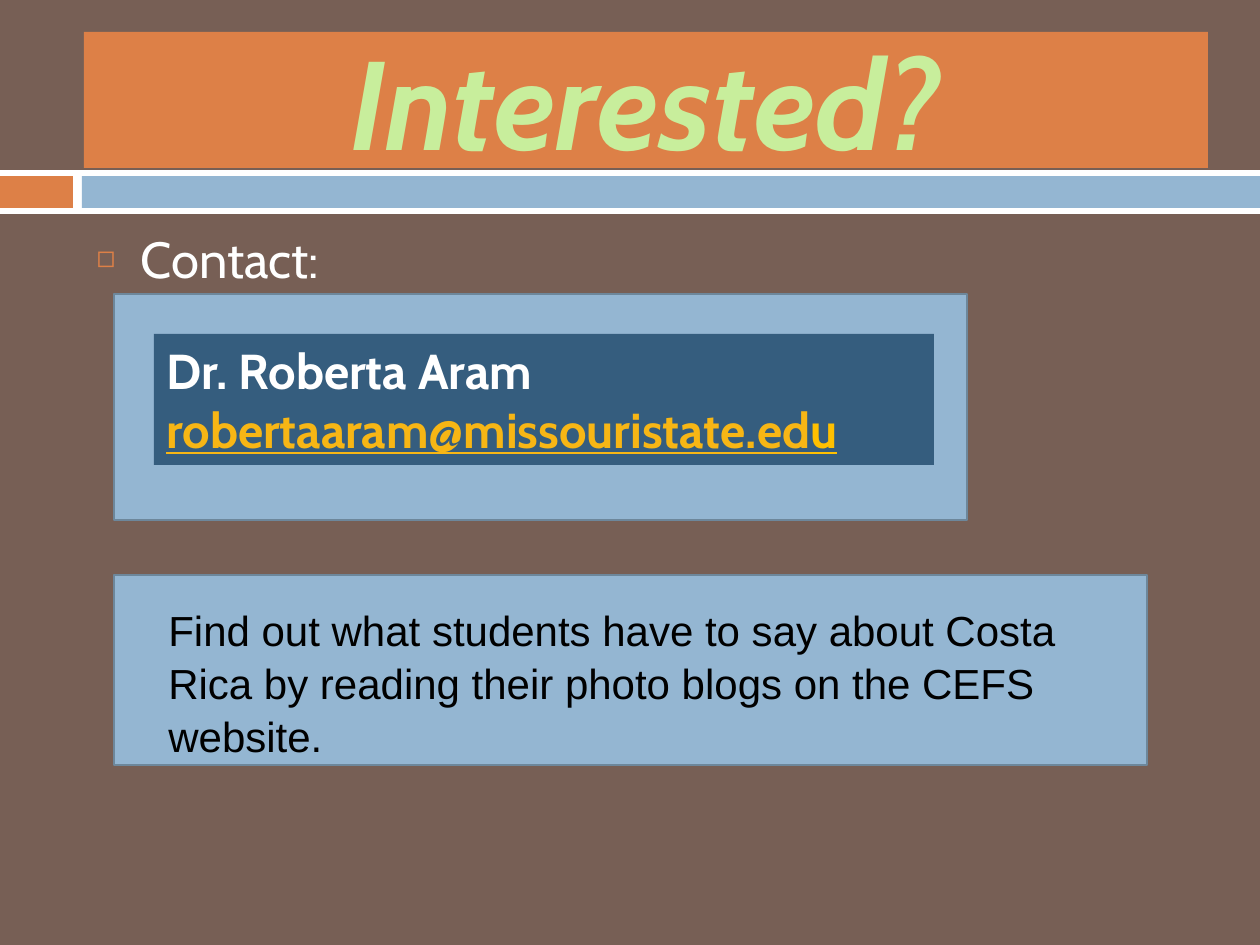
from dataclasses import dataclass
from typing import Optional

from lxml.etree import SubElement
from pptx import Presentation
from pptx.dml.color import RGBColor
from pptx.enum.shapes import MSO_SHAPE as Preset
from pptx.enum.text import MSO_ANCHOR as Anchor, MSO_AUTO_SIZE as AutoSize, PP_ALIGN as Align
from pptx.oxml.ns import qn
from pptx.util import Emu, Pt

PX = 914400 // 126  # EMU in one px


@dataclass(frozen=True)
class Theme:
    background: str = "775F55"
    white: str = "FFFFFF"
    black: str = "000000"
    orange: str = "DD8047"
    blue: str = "94B6D2"
    navy: str = "355D7E"
    border: str = "6D879B"
    lime: str = "C8EE9C"
    link: str = "F7B615"
    link_end: str = "FFC000"
    heading_font: str = "Cabin"
    text_font: str = "Arial"
    title_size: int = 72
    list_size: int = 29
    contact_size: int = 28
    note_size: int = 24


@dataclass(frozen=True)
class Box:
    left: int
    top: int
    width: int
    height: int
    fill: str = ""
    line: Optional[str] = None

    def emu(self) -> list[Emu]:
        return [Emu(n * PX) for n in (self.left, self.top, self.width, self.height)]


THEME = Theme()
BANDS = [
    Box(0, 170, 1260, 44, THEME.white),
    Box(0, 176, 73, 32, THEME.orange),
    Box(82, 176, 1178, 32, THEME.blue),
]
PANELS = [
    Box(114, 294, 853, 226, THEME.blue, THEME.border),
    Box(114, 575, 1033, 190, THEME.blue, THEME.border),
]
TITLE = Box(84, 32, 1124, 136, THEME.orange)
CONTACT_LIST = Box(84, 221, 1124, 600)
CONTACT_CARD = Box(154, 334, 780, 131, THEME.navy)
NOTE = Box(123, 596, 975, 165)


def rgb(color: str) -> RGBColor:
    return RGBColor.from_string(color)


def paint(shape, color: str) -> None:
    shape.fill.solid()
    shape.fill.fore_color.rgb = rgb(color)


def move(shape, box: Box) -> None:
    shape.left, shape.top, shape.width, shape.height = box.emu()


def add_box(slide, box: Box):
    shape = slide.shapes.add_shape(Preset.RECTANGLE, *box.emu())
    shape.shadow.inherit = False
    paint(shape, box.fill)
    if box.line:
        shape.line.color.rgb = rgb(box.line)
        shape.line.width = Pt(1.5)
    else:
        shape.line.fill.background()
    return shape


def set_font(paragraph, name: str, size: int, color: str, bold: bool = False,
             italic: bool = False) -> None:
    font = paragraph.font
    font.name, font.size, font.bold, font.italic = name, Pt(size), bold, italic
    font.color.rgb = rgb(color)


def set_frame(shape, anchor: Anchor = Anchor.TOP):
    frame = shape.text_frame
    frame.word_wrap = True
    frame.auto_size = AutoSize.NONE
    frame.vertical_anchor = anchor
    return frame


def set_indent(paragraph, left: int, hanging: int = 0) -> None:
    properties = paragraph._p.get_or_add_pPr()
    properties.set("marL", str(left * PX))
    properties.set("indent", str(-hanging * PX))


def add_bullet(paragraph, character: str, color: str, percent: int) -> None:
    properties = paragraph._p.get_or_add_pPr()
    bullet_color = SubElement(properties, qn("a:buClr"))
    SubElement(bullet_color, qn("a:srgbClr"), val=color)
    SubElement(properties, qn("a:buSzPct"), val=str(percent * 1000))
    SubElement(properties, qn("a:buChar"), char=character)


def main() -> None:
    presentation = Presentation()
    presentation.slide_width = Emu(1260 * PX)
    presentation.slide_height = Emu(945 * PX)
    slide = presentation.slides.add_slide(presentation.slide_layouts[1])
    paint(slide.background, THEME.background)

    # Title
    title = slide.shapes.title
    move(title, TITLE)
    paint(title, TITLE.fill)
    paragraph = set_frame(title, Anchor.MIDDLE).paragraphs[0]
    paragraph.text = "Interested?"
    paragraph.alignment = Align.CENTER
    set_font(paragraph, THEME.heading_font, THEME.title_size, THEME.lime, bold=True, italic=True)

    # Contact bullet
    body = slide.placeholders[1]
    move(body, CONTACT_LIST)
    paragraph = set_frame(body).paragraphs[0]
    paragraph.text = "Contact:"
    paragraph.space_before = Pt(0)
    set_indent(paragraph, 44, hanging=44)
    add_bullet(paragraph, "◻", THEME.orange, 60)
    set_font(paragraph, THEME.heading_font, THEME.list_size, THEME.white)

    # Bands under the title and panels behind the text
    for box in BANDS + PANELS:
        add_box(slide, box)

    # Contact card
    frame = set_frame(add_box(slide, CONTACT_CARD))
    name, email = frame.paragraphs[0], frame.add_paragraph()
    name.text = "Dr. Roberta Aram"
    for paragraph, color in ((name, THEME.white), (email, THEME.link)):
        paragraph.alignment = Align.LEFT
        set_font(paragraph, THEME.heading_font, THEME.contact_size, color, bold=True)
    email.font.underline = True
    for text, color in (("robertaaram@missouristate.ed", THEME.link), ("u", THEME.link_end)):
        run = email.add_run()
        run.text = text
        run.font.color.rgb = rgb(color)

    # Note about the blogs
    paragraph = set_frame(slide.shapes.add_textbox(*NOTE.emu())).paragraphs[0]
    paragraph.text = ("Find out what students have to say about Costa Rica "
                      "by reading their photo blogs on the CEFS website.")
    paragraph.line_spacing = 1.05
    set_indent(paragraph, 33)
    set_font(paragraph, THEME.text_font, THEME.note_size, THEME.black)

    presentation.save("out.pptx")


if __name__ == "__main__":
    main()
